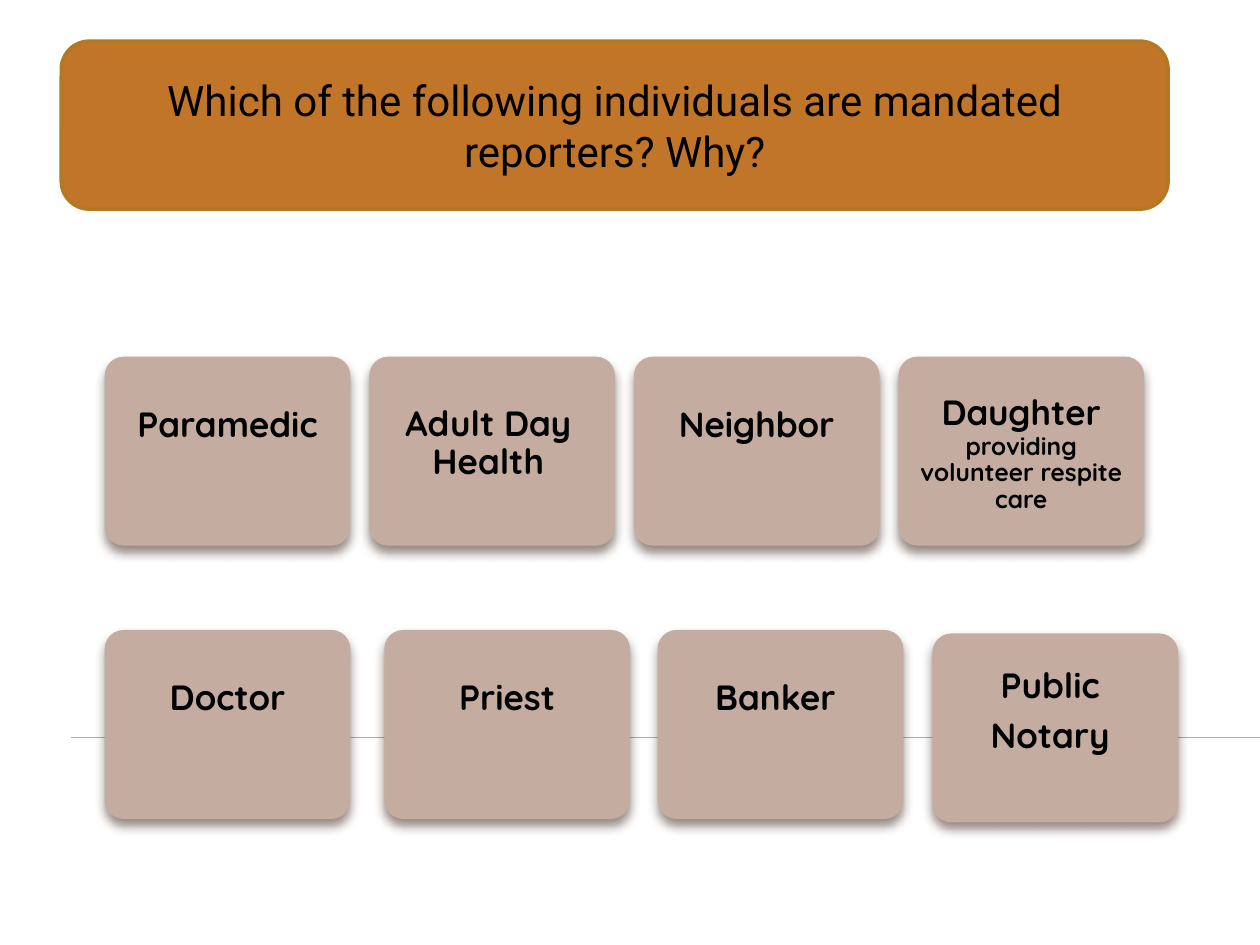
import pptx
import pptx.util
import pptx.dml.color
import pptx.enum.shapes
import pptx.enum.text
import pptx.oxml
import pptx.oxml.ns
from lxml import etree

Pt = pptx.util.Pt
RGBColor = pptx.dml.color.RGBColor
MSO_SHAPE = pptx.enum.shapes.MSO_SHAPE
qn = pptx.oxml.ns.qn

BLACK = RGBColor(0x00, 0x00, 0x00)
ORANGE = RGBColor(0xC1, 0x75, 0x29)
OCHRE = RGBColor(0xB2, 0x78, 0x22)
AMBER = RGBColor(0xF0, 0xA2, 0x2E)
TAUPE = RGBColor(0xC4, 0xAD, 0xA0)
BROWN = RGBColor(0x4E, 0x3B, 0x30)

CARD_WIDTH, CARD_HEIGHT = 140.4, 108
LEFT = 59.8
TOP_ROW, BOTTOM_ROW = 203.8, 360


class SlideBuilder:
    title_font, title_size = "Roboto", 24
    card_font, card_size = "Quicksand", 20

    def __init__(self, slide):
        self.slide = slide

    def rule(self, left, right, top):
        line = self.slide.shapes.add_connector(
            pptx.enum.shapes.MSO_CONNECTOR.STRAIGHT, Pt(left), Pt(top), Pt(right), Pt(top))
        line.line.color.rgb = AMBER
        line.line.width = Pt(0.75)
        etree.SubElement(line.element.spPr, qn("a:effectLst"))

    def banner(self, text, left, top, width, height):
        box = [Pt(value) for value in (left, top, width, height)]
        shape = self.slide.shapes.add_shape(MSO_SHAPE.ROUNDED_RECTANGLE, *box)
        shape.shadow.inherit = False
        shape.fill.solid()
        shape.fill.fore_color.rgb = ORANGE
        shape.line.color.rgb = OCHRE
        shape.line.width = Pt(2)
        title = self.slide.shapes.title
        title.element.addprevious(shape.element)
        title.left, title.top, title.width, title.height = box
        frame = title.text_frame
        frame.text = text
        frame.word_wrap = True
        frame.auto_size = pptx.enum.text.MSO_AUTO_SIZE.NONE
        frame.margin_left = frame.margin_right = Pt(16)
        frame.vertical_anchor = pptx.enum.text.MSO_ANCHOR.MIDDLE
        paragraph = frame.paragraphs[0]
        paragraph.alignment = pptx.enum.text.PP_ALIGN.CENTER
        self.format_run(paragraph.runs[0], self.title_font, self.title_size)

    def format_run(self, run, font, size, bold=False):
        run.font.name = font
        run.font.size = Pt(size)
        run.font.bold = bold
        run.font.color.rgb = BLACK

    def drop_shadow(self, shape):
        shape.shadow.inherit = False
        effects = shape.element.spPr.find(qn("a:effectLst"))
        shadow = etree.SubElement(
            effects, qn("a:outerShdw"), blurRad=str(Pt(6)), dist=str(Pt(4)),
            dir="5400000", algn="ctr", rotWithShape="0")
        color = etree.SubElement(shadow, qn("a:srgbClr"), val=str(BROWN))
        etree.SubElement(color, qn("a:alpha"), val="60000")

    def card(self, lines, left, top, shift=(0, 0), label_height=79.2):
        group = self.slide.shapes.add_group_shape()
        shape = group.shapes.add_shape(
            MSO_SHAPE.ROUNDED_RECTANGLE, Pt(left), Pt(top), Pt(CARD_WIDTH), Pt(CARD_HEIGHT))
        shape.adjustments[0] = 0.1
        shape.fill.solid()
        shape.fill.fore_color.rgb = TAUPE
        shape.line.fill.background()
        self.drop_shadow(shape)
        label = group.shapes.add_textbox(
            Pt(left + shift[0]), Pt(top + shift[1]), Pt(CARD_WIDTH), Pt(label_height))
        frame = label.text_frame
        frame.word_wrap = True
        frame.vertical_anchor = pptx.enum.text.MSO_ANCHOR.MIDDLE
        frame.margin_left = frame.margin_right = Pt(7.2)
        frame.margin_top = frame.margin_bottom = Pt(7.2)
        for index, line in enumerate(lines):
            paragraph = frame.add_paragraph() if index else frame.paragraphs[0]
            paragraph.alignment = pptx.enum.text.PP_ALIGN.CENTER
            paragraph.line_spacing = 0.9
            paragraph.space_after = Pt(7)
            runs = [(line, self.card_size)] if isinstance(line, str) else line
            for text, size in runs:
                run = paragraph.add_run()
                run.text = text
                self.format_run(run, self.card_font, size, bold=True)


def main():
    presentation = pptx.Presentation()
    presentation.slide_width, presentation.slide_height = Pt(720), Pt(540)
    slide = presentation.slides.add_slide(presentation.slide_layouts[5])
    builder = SlideBuilder(slide)
    builder.rule(40.5, 720, 421.4)
    builder.banner("Which of the following individuals are mandated reporters? Why?",
                   35, 23.5, 632.5, 96)

    daughter = [("Daughter", 20), (" ", 24), ("providing volunteer respite care", 14)]
    top_cards = [
        (["Paramedic"], (0, 0), 79.2),
        (["Adult Day Health"], (-2.2, 33.8), 32.4),
        (["Neighbor"], (0, 0), 79.2),
        ([daughter], (0, 14.4), 79.2),
    ]
    for column, (lines, shift, label_height) in enumerate(top_cards):
        builder.card(lines, LEFT + column * 151.2, TOP_ROW, shift, label_height)

    builder.card(["Doctor"], LEFT, BOTTOM_ROW)
    builder.card(["Priest"], 219.6, BOTTOM_ROW)
    builder.card(["Banker"], 375.8, BOTTOM_ROW, (-2.9, 7.2), 64.8)
    builder.card(["Public", "Notary"], 532.8, BOTTOM_ROW + 2, (-2.9, 5.2))
    presentation.save("out.pptx")


if __name__ == "__main__":
    main()
